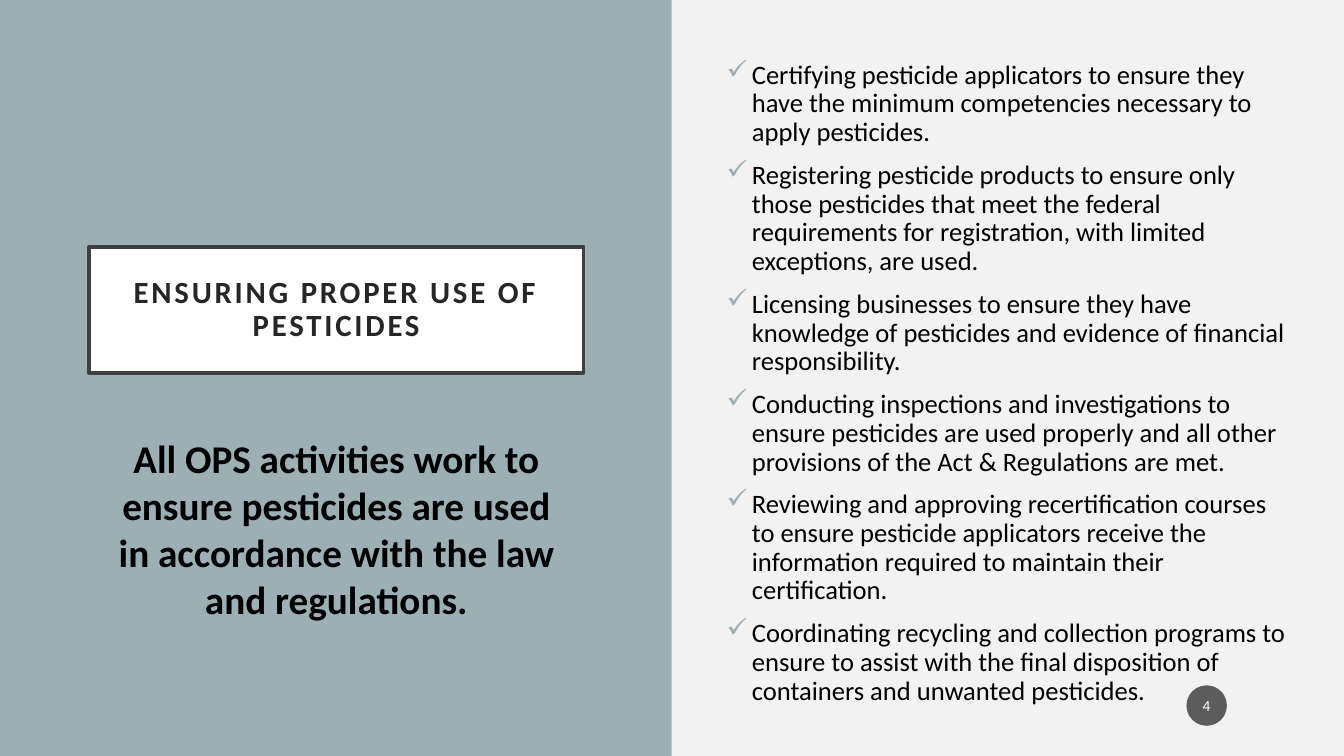
from dataclasses import dataclass

from lxml.etree import SubElement
from pptx import Presentation
from pptx.dml.color import RGBColor
from pptx.enum.shapes import MSO_SHAPE
from pptx.enum.text import MSO_ANCHOR, MSO_AUTO_SIZE, PP_ALIGN
from pptx.oxml.ns import qn
from pptx.util import Cm, Pt


@dataclass(frozen=True)
class Theme:
    font: str = "Calibri"
    back: str = "F2F2F2"
    panel: str = "9BAFB5"
    white: str = "FFFFFF"
    frame: str = "404040"
    head: str = "262626"
    text: str = "000000"
    badge: str = "1D1D1D"
    head_size: int = 22
    list_size: int = 19
    claim_size: int = 28
    page_size: int = 11


theme = Theme()
duties = [
    "Certifying pesticide applicators to ensure they have the minimum competencies necessary to apply pesticides.",
    "Registering pesticide products to ensure only those pesticides that meet the federal requirements for "
    "registration, with limited exceptions, are used.",
    "Licensing businesses to ensure they have knowledge of pesticides and evidence of financial responsibility.",
    "Conducting inspections and investigations to ensure pesticides are used properly and all other provisions "
    "of the Act & Regulations are met.",
    "Reviewing and approving recertification courses to ensure pesticide applicators receive the information "
    "required to maintain their certification.",
    "Coordinating recycling and collection programs to ensure to assist with the final disposition of containers "
    "and unwanted pesticides.",
]


def paint(shape, color):
    """Give a shape a plain fill with no shadow or outline."""
    shape.shadow.inherit = False
    shape.fill.solid()
    shape.fill.fore_color.rgb = RGBColor.from_string(color)
    shape.line.fill.background()


def style(para, size, color, bold=False, align=PP_ALIGN.CENTER):
    """Align a paragraph and set the font of its runs."""
    para.alignment = align
    for run in para.runs:
        run.font.name = theme.font
        run.font.size = Pt(size)
        run.font.bold = bold
        run.font.color.rgb = RGBColor.from_string(color)


deck = Presentation()
deck.slide_width, deck.slide_height = Cm(33.87), Cm(19.05)
slide = deck.slides.add_slide(deck.slide_layouts[5])
slide.background.fill.solid()
slide.background.fill.fore_color.rgb = RGBColor.from_string(theme.back)
shapes = slide.shapes

# Left panel, behind the title
panel = shapes.add_shape(MSO_SHAPE.RECTANGLE, 0, 0, Cm(16.93), deck.slide_height)
paint(panel, theme.panel)
title = shapes.title
title.element.addprevious(panel.element)

# Framed title
title.left, title.top, title.width, title.height = Cm(2.24), Cm(6.22), Cm(12.47), Cm(3.18)
title.fill.solid()
title.fill.fore_color.rgb = RGBColor.from_string(theme.white)
title.line.color.rgb = RGBColor.from_string(theme.frame)
title.line.width = Pt(2.5)
frame = title.text_frame
frame.text = "ENSURING PROPER USE OF PESTICIDES"
frame.word_wrap = True
frame.auto_size = MSO_AUTO_SIZE.NONE
frame.vertical_anchor = MSO_ANCHOR.MIDDLE
frame.margin_left = frame.margin_right = frame.margin_top = frame.margin_bottom = Cm(0.51)
head = frame.paragraphs[0]
head.line_spacing = 0.9
style(head, theme.head_size, theme.head, bold=True)
head.runs[0].font._element.set("spc", "200")

# Checklist of duties
frame = shapes.add_textbox(Cm(18.06), Cm(1.42), Cm(14.66), Cm(16.87)).text_frame
frame.word_wrap = True
frame.text = "\n".join(duties)
for para in frame.paragraphs:
    style(para, theme.list_size, theme.text, align=PP_ALIGN.LEFT)
    para.line_spacing = 0.9
    para.space_before = Pt(10)
    props = para._p.get_or_add_pPr()
    props.set("marL", str(Cm(0.64)))
    props.set("indent", str(-Cm(0.64)))
    tint = SubElement(props, qn("a:buClr"))
    SubElement(tint, qn("a:srgbClr"), val=theme.panel)
    SubElement(props, qn("a:buChar"), char="✓")

# Claim below the title
frame = shapes.add_textbox(Cm(2.57), Cm(10.82), Cm(11.81), Cm(6.96)).text_frame
frame.word_wrap = True
frame.text = "All OPS activities work to ensure pesticides are used in accordance with the law and regulations."
claim = frame.paragraphs[0]
claim.space_before = Pt(10)
style(claim, theme.claim_size, theme.text, bold=True)

# Page number badge
badge = shapes.add_shape(MSO_SHAPE.OVAL, Cm(29.9), Cm(17.27), Cm(1.02), Cm(1.02))
paint(badge, theme.badge)
tint = badge.fill._xPr.find(qn("a:solidFill"))[0]
SubElement(tint, qn("a:alpha"), val="70000")
frame = badge.text_frame
frame.text = "4"
frame.vertical_anchor = MSO_ANCHOR.MIDDLE
frame.margin_left = frame.margin_right = Cm(0.05)
style(frame.paragraphs[0], theme.page_size, theme.white)

deck.save("out.pptx")
